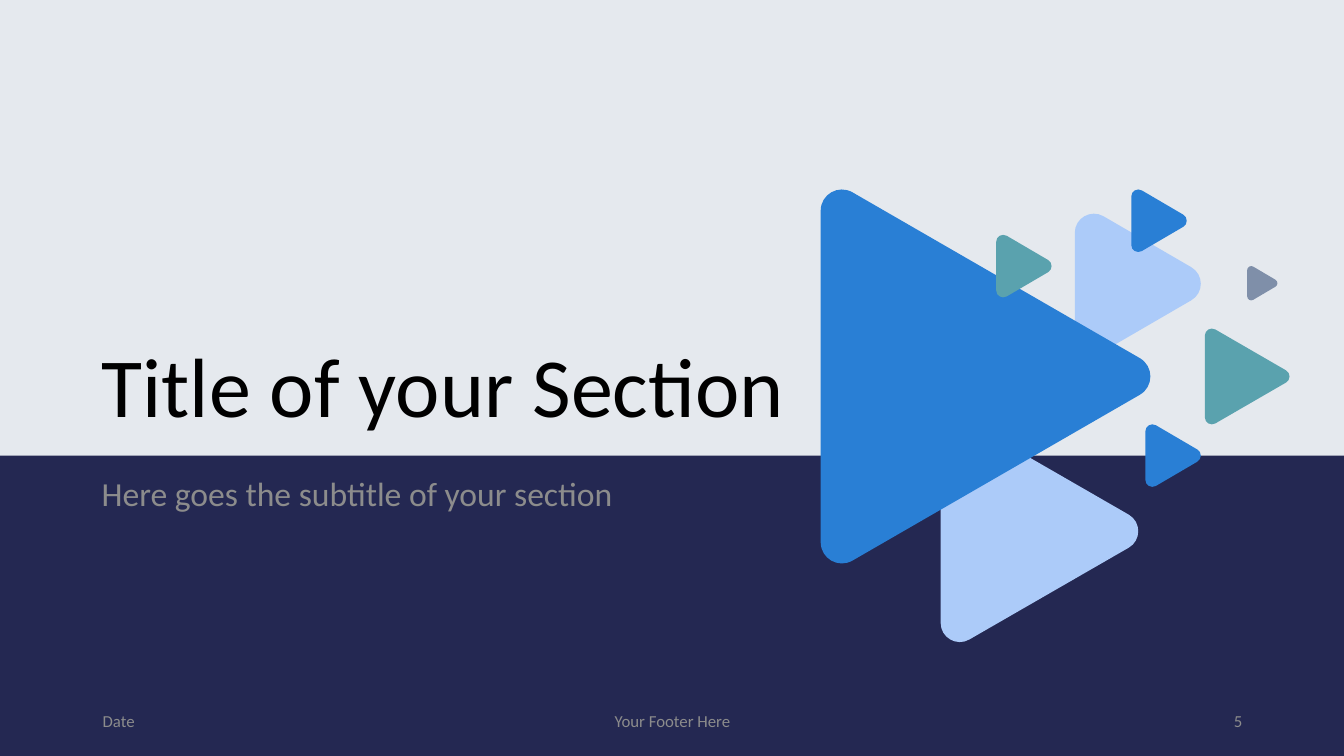
from math import cos, radians, sin, tan

from lxml.etree import SubElement
from pptx import Presentation
from pptx.dml.color import RGBColor
from pptx.enum.shapes import MSO_SHAPE as Shape
from pptx.enum.text import MSO_ANCHOR as Anchor, PP_ALIGN as Align
from pptx.oxml.ns import qn
from pptx.util import Inches, Pt

FONT = "Calibri"
PALE = RGBColor(0xE5, 0xE9, 0xEE)
NAVY = RGBColor(0x24, 0x28, 0x52)
BLACK = RGBColor(0x00, 0x00, 0x00)
GREY = RGBColor(0x8C, 0x8C, 0x8C)
SKY = RGBColor(0xAC, 0xCB, 0xF9)
BLUE = RGBColor(0x29, 0x7F, 0xD5)
SLATE = RGBColor(0x7F, 0x8F, 0xA9)
TEAL = RGBColor(0x5A, 0xA2, 0xAE)

WIDTH, HEIGHT = 13.33, 7.5
SPLIT = 4.52

# left, top, width, height, corner radius (relative to the cluster), colour
ARROWS = [
    (1.19, 2.29, 1.96, 2.2, 0.19, SKY),
    (2.52, 0.24, 1.25, 1.39, 0.19, SKY),
    (3.22, 2.33, 0.55, 0.62, 0.07, BLUE),
    (3.08, 0, 0.55, 0.62, 0.07, BLUE),
    (4.23, 0.76, 0.3, 0.34, 0.04, SLATE),
    (3.81, 1.38, 0.84, 0.95, 0.07, TEAL),
    (0, 0, 3.27, 3.71, 0.21, BLUE),
    (1.74, 0.45, 0.55, 0.62, 0.07, TEAL),
]


def paint(shape, color):
    shape.shadow.inherit = False
    shape.fill.solid()
    shape.fill.fore_color.rgb = color
    shape.line.fill.background()


def add_text(slide, box, text, size, color, anchor, align=Align.LEFT):
    frame = slide.shapes.add_textbox(*map(Inches, box)).text_frame
    frame.word_wrap = True
    frame.vertical_anchor = anchor
    par = frame.paragraphs[0]
    par.text = text
    par.alignment = align
    par.font.name = FONT
    par.font.size = Pt(size)
    par.font.color.rgb = color
    return par


def add_step(track, kind, *points):
    """Append one drawing command to an outline."""
    step = SubElement(track, qn(f"a:{kind}"))
    for x, y in points:
        SubElement(step, qn("a:pt"), x=str(Inches(x)), y=str(Inches(y)))


def bend(x, y, radius, start):
    """Return the four curve points of a 120 degree arc about x, y."""
    pull = 4 / 3 * tan(radians(30))
    ends = []
    for angle, sign in ((start, 1), (start + 120, -1)):
        c, s = cos(radians(angle)), sin(radians(angle))
        end = (x + radius * c, y + radius * s)
        grip = (end[0] - sign * pull * radius * s,
                end[1] + sign * pull * radius * c)
        ends += [end, grip]
    first, grip, last, hold = ends
    return first, grip, hold, last


def add_arrow(group, box, radius, color):
    """Draw a right-pointing triangle with round corners that fills the box."""
    left, top, width, height = map(Inches, box)
    pen = group.shapes.build_freeform(left, top)
    pen.add_line_segments([(left + width, top), (left + width, top + height),
                           (left, top + height)])
    shape = pen.convert_to_shape()
    track = next(shape.element.iter(qn("a:path")))
    for step in list(track):
        track.remove(step)

    wide, high = box[2:]
    kind = "moveTo"
    for x, y, start in [
        (radius, radius, 180),
        (wide - radius, high / 2, 300),
        (radius, high - radius, 60),
    ]:
        first, *rest = bend(x, y, radius, start)
        add_step(track, kind, first)
        add_step(track, "cubicBezTo", *rest)
        kind = "lnTo"
    add_step(track, "close")
    paint(shape, color)


def add_cluster(slide, left, top):
    group = slide.shapes.add_group_shape()
    for x, y, width, height, radius, color in ARROWS:
        add_arrow(group, (left + x, top + y, width, height), radius, color)


def add_band(slide, top):
    box = (0, top, WIDTH, HEIGHT - top)
    paint(slide.shapes.add_shape(Shape.RECTANGLE, *map(Inches, box)), NAVY)


def add_heading(slide, left, split):
    """Place the title above the split and the subtitle below it."""
    title = add_text(slide, (left, 0.45, 7.22, split - 0.6),
                     "Title of your Section", 60, BLACK, Anchor.BOTTOM)
    sub = add_text(slide, (left, split + 0.17, 6.81, 1.97),
                   "Here goes the subtitle of your section", 24, GREY,
                   Anchor.TOP)
    title.line_spacing = sub.line_spacing = 0.9


def add_footer(slide, left, top):
    for x, width, text, align in [
        (0, 3, "Date", Align.LEFT),
        (3.5, 4.5, "Your Footer Here", Align.CENTER),
        (8.5, 3, "5", Align.RIGHT),
    ]:
        add_text(slide, (left + x, top, width, 0.4), text, 12, GREY,
                 Anchor.MIDDLE, align)


def main():
    deck = Presentation()
    deck.slide_width, deck.slide_height = Inches(WIDTH), Inches(HEIGHT)
    slide = deck.slides.add_slide(deck.slide_layouts[6])
    back = slide.background.fill
    back.solid()
    back.fore_color.rgb = PALE
    add_band(slide, SPLIT)
    add_heading(slide, 0.91, SPLIT)
    add_footer(slide, 0.92, 6.95)
    add_cluster(slide, 8.14, 1.88)
    deck.save("out.pptx")


if __name__ == "__main__":
    main()
